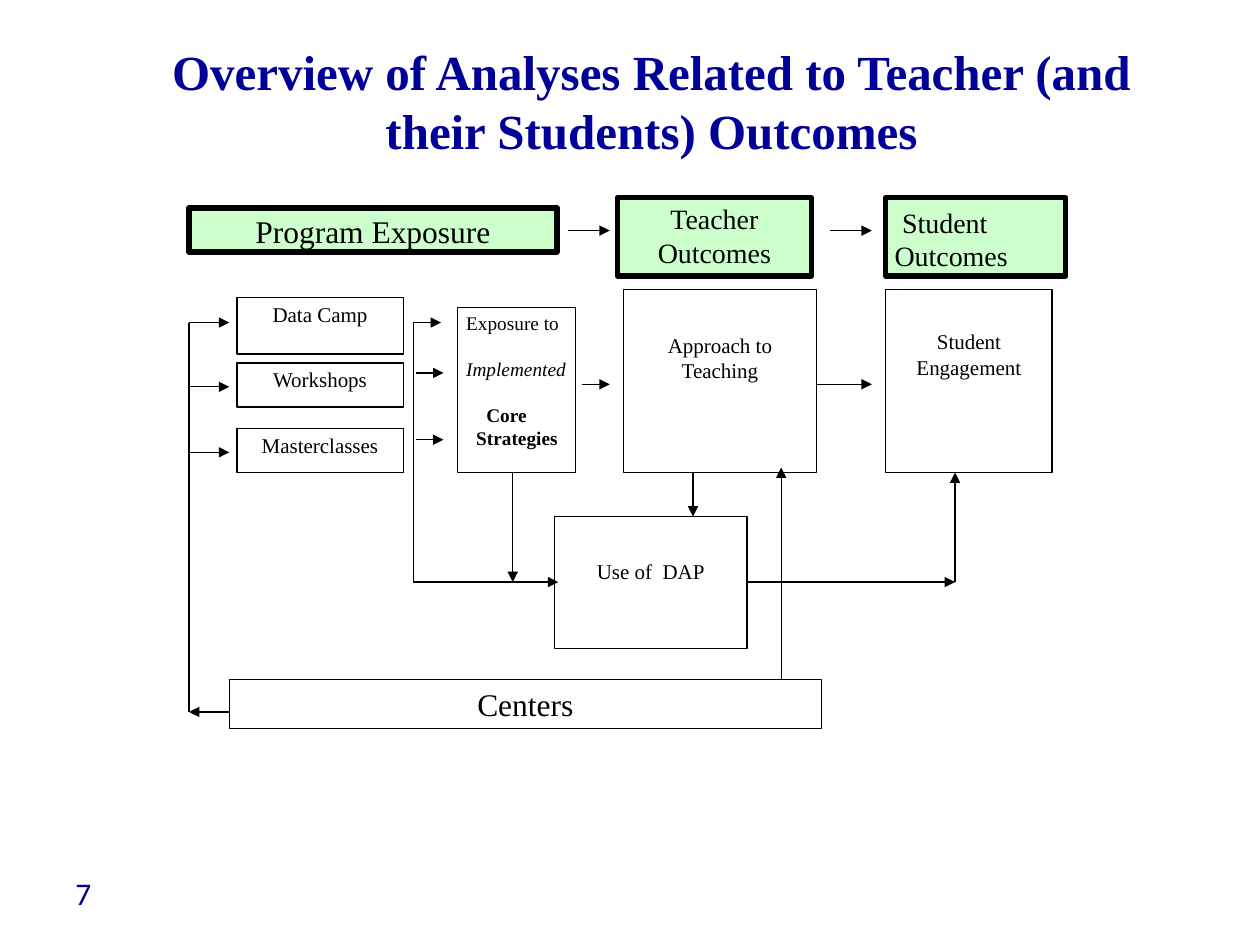
from dataclasses import dataclass

from lxml import etree
from pptx import Presentation
from pptx.dml.color import RGBColor
from pptx.enum.shapes import MSO_CONNECTOR, MSO_SHAPE
from pptx.enum.text import MSO_ANCHOR, MSO_AUTO_SIZE, PP_ALIGN
from pptx.oxml.ns import qn
from pptx.util import Inches, Pt

RECT = MSO_SHAPE.RECTANGLE
STRAIGHT = MSO_CONNECTOR.STRAIGHT
TOP, MIDDLE = MSO_ANCHOR.TOP, MSO_ANCHOR.MIDDLE
LEFT, CENTER = PP_ALIGN.LEFT, PP_ALIGN.CENTER
SERIF, SANS = "Times New Roman", "Calibri"
BLACK, WHITE, GREEN, NAVY = "000000", "FFFFFF", "CCFFCC", "000099"


@dataclass
class Para:
    text: str
    size: float = 12
    bold: bool = False
    italic: bool = False
    align: PP_ALIGN = CENTER
    before: float = 0
    margin: float = 0
    indent: float = 0
    face: str = SERIF
    color: str = BLACK


@dataclass
class Box:
    left: float
    top: float
    width: float
    height: float
    paras: list[Para]
    fill: str = WHITE
    line: float = 0.75
    inset: float = 0.03


@dataclass
class Line:
    x1: float
    y1: float
    x2: float
    y2: float
    arrow: bool = True


HEADS = [
    Box(1.5, 1.65, 2.92, 0.35, [Para("Program Exposure", 18)], GREEN, 3),
    Box(4.9, 1.57, 1.54, 0.62, [Para("Teacher Outcomes", 16)], GREEN, 3),
    Box(7.03, 1.57, 1.43, 0.62,
        [Para("Student Outcomes", 16, align=LEFT, indent=0.06)], GREEN, 3, 0.06),
]
EVENTS = [
    Box(1.88, top, 1.32, height, [Para(name)])
    for name, top, height in [("Data Camp", 2.36, 0.45),
                              ("Workshops", 2.88, 0.35),
                              ("Masterclasses", 3.4, 0.35)]
]
CORE = [
    Para("Exposure to", 11, align=LEFT),
    Para("Implemented", 11, italic=True, align=LEFT, before=13),
    Para("Core", 11, bold=True, align=LEFT, before=13, margin=0.16),
    Para("Strategies", 11, bold=True, align=LEFT, margin=0.08),
]
STEPS = [
    Box(3.63, 2.44, 0.94, 1.31, CORE),
    Box(4.95, 2.3, 1.53, 1.45, [Para("Approach to Teaching")], inset=0.34),
    Box(7.03, 2.3, 1.32, 1.45, [Para("Student Engagement")], inset=0.31),
    Box(4.4, 4.1, 1.53, 1.05, [Para("Use of  DAP")], inset=0.33),
    Box(1.82, 5.39, 4.7, 0.39, [Para("Centers", 18)], inset=0.05),
]

SPINE, TRUNK, BASE = 1.5, 3.28, 4.62
LINES = [
    # Between headings and between steps
    Line(4.51, 1.83, 4.84, 1.83),
    Line(6.59, 1.83, 6.92, 1.83),
    Line(4.62, 3.05, 4.84, 3.05),
    Line(6.48, 3.05, 6.92, 3.05),
    # Centers to events
    Line(1.82, 5.65, SPINE, 5.65),
    Line(SPINE, 5.65, SPINE, 2.56, False),
    *[Line(SPINE, y, 1.82, y) for y in (2.56, 3.07, 3.59)],
    # Events to core strategies and DAP
    Line(TRUNK, BASE, TRUNK, 2.56, False),
    Line(TRUNK, 2.56, 3.5, 2.56),
    *[Line(3.3, y, 3.52, y) for y in (2.96, 3.49)],
    Line(TRUNK, BASE, 4.43, BASE),
    # Into and out of DAP
    Line(4.07, 3.75, 4.07, BASE),
    Line(5.5, 3.75, 5.5, 4.1),
    Line(5.94, BASE, 7.58, BASE),
    Line(7.58, BASE, 7.58, 3.75),
    # Centers to teaching
    Line(6.2, 5.39, 6.2, 3.71),
]


def rgb(code: str) -> RGBColor:
    return RGBColor.from_string(code)


def place(shape, left: float, top: float, width: float, height: float) -> None:
    spots = {"left": left, "top": top, "width": width, "height": height}
    for name, value in spots.items():
        setattr(shape, name, Inches(value))


def write(frame, paras: list[Para], anchor: MSO_ANCHOR,
          side: float, top: float, bottom: float) -> None:
    form = {
        "word_wrap": True,
        "auto_size": MSO_AUTO_SIZE.NONE,
        "vertical_anchor": anchor,
        "margin_left": Inches(side),
        "margin_right": Inches(side),
        "margin_top": Inches(top),
        "margin_bottom": Inches(bottom),
    }
    for name, value in form.items():
        setattr(frame, name, value)
    for i, para in enumerate(paras):
        item = frame.add_paragraph() if i else frame.paragraphs[0]
        item.alignment = para.align
        item.space_before = Pt(para.before)
        props = item._p.get_or_add_pPr()
        props.set("marL", str(Inches(para.margin)))
        props.set("indent", str(Inches(para.indent)))
        run = item.add_run()
        run.text = para.text
        style = {"name": para.face, "size": Pt(para.size),
                 "bold": para.bold, "italic": para.italic}
        for name, value in style.items():
            setattr(run.font, name, value)
        run.font.color.rgb = rgb(para.color)


def draw_box(slide, box: Box) -> None:
    shape = slide.shapes.add_shape(RECT, 0, 0, 0, 0)
    place(shape, box.left, box.top, box.width, box.height)
    shape.shadow.inherit = False
    shape.fill.solid()
    shape.fill.fore_color.rgb = rgb(box.fill)
    shape.line.color.rgb = rgb(BLACK)
    shape.line.width = Pt(box.line)
    write(shape.text_frame, box.paras, TOP, 0.07, box.inset, 0.03)


def draw_line(slide, line: Line) -> None:
    ends = [Inches(n) for n in (line.x1, line.y1, line.x2, line.y2)]
    link = slide.shapes.add_connector(STRAIGHT, *ends)
    link.line.color.rgb = rgb(BLACK)
    link.line.width = Pt(0.75)
    if line.arrow:
        etree.SubElement(link.line._get_or_add_ln(), qn("a:tailEnd"), type="triangle")
    etree.SubElement(link._element.spPr, qn("a:effectLst"))


def main() -> None:
    deck = Presentation()
    deck.slide_width, deck.slide_height = Inches(10), Inches(7.5)
    slide = deck.slides.add_slide(deck.slide_layouts[5])

    title = slide.shapes.title
    place(title, 0.84, 0.65, 8.66, 0.74)
    head = Para("Overview of Analyses Related to Teacher (and their Students) Outcomes",
                28, bold=True, color=NAVY)
    write(title.text_frame, [head], MIDDLE, 0.1, 0.05, 0.5)

    for box in HEADS + EVENTS + STEPS:
        draw_box(slide, box)
    for line in LINES:
        draw_line(slide, line)

    page = slide.shapes.add_textbox(0, 0, 0, 0)
    place(page, 0.5, 6.89, 2.25, 0.4)
    number = Para("7", 18, align=LEFT, face=SANS, color=NAVY)
    write(page.text_frame, [number], MIDDLE, 0.1, 0.05, 0.05)

    deck.save("out.pptx")


if __name__ == "__main__":
    main()
